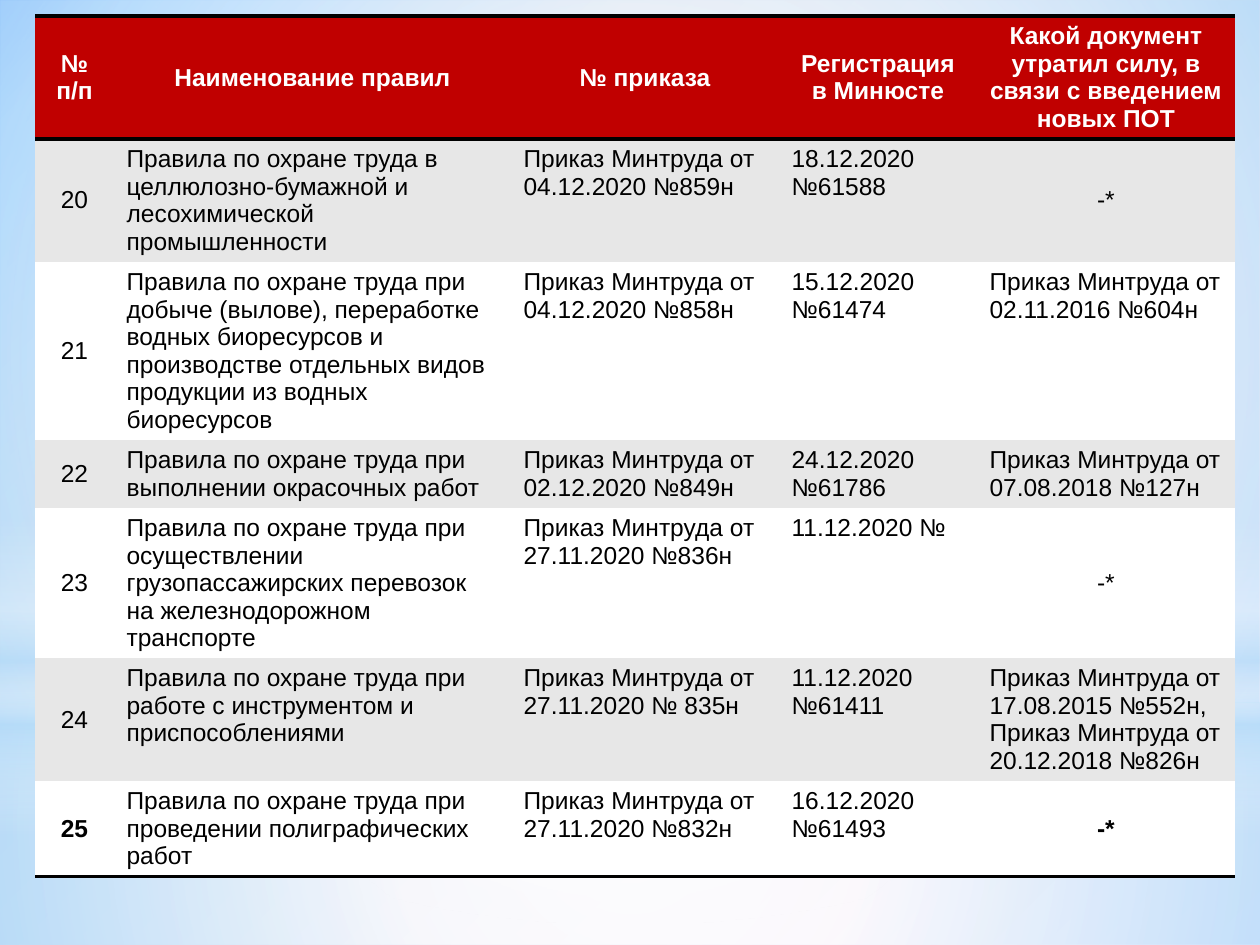
from typing import NamedTuple

from lxml import etree
from pptx import Presentation
from pptx.dml.color import RGBColor
from pptx.enum.shapes import MSO_SHAPE
from pptx.enum.text import MSO_ANCHOR, PP_ALIGN
from pptx.oxml.ns import qn
from pptx.util import Pt

EMU_PER_PX = 914400 / 126
SLIDE_W, SLIDE_H = 1260, 945

RECT, OVAL = MSO_SHAPE.RECTANGLE, MSO_SHAPE.OVAL
CENTER, LEFT = PP_ALIGN.CENTER, PP_ALIGN.LEFT
MIDDLE, TOP = MSO_ANCHOR.MIDDLE, MSO_ANCHOR.TOP

WHITE = RGBColor(0xFF, 0xFF, 0xFF)
BLACK = RGBColor(0x00, 0x00, 0x00)
RED = RGBColor(0xC0, 0x00, 0x00)
GREY = RGBColor(0xE7, 0xE7, 0xE7)
PALE_BLUE = RGBColor(0xB4, 0xDC, 0xFA)
SKY_DEEP = RGBColor(0x5E, 0x9E, 0xFF)
SKY = RGBColor(0x85, 0xC2, 0xFF)
SKY_PALE = RGBColor(0xC4, 0xD6, 0xEB)
PINK = RGBColor(0xFF, 0xEB, 0xFA)

FONT, FONT_SIZE = "Arial", Pt(14)
BORDER_WIDTH = Pt(2)
NO_STYLE_NO_GRID = "{2D5ABB26-0587-4C30-8999-92F81FD0307C}"


class Stop(NamedTuple):
    pos: int
    color: RGBColor
    alpha: int = 100


class Glow(NamedTuple):
    """A gradient shape behind the table; angle None means radial."""
    kind: MSO_SHAPE
    x: int
    y: int
    w: int
    h: int
    stops: list[Stop]
    angle: int | None = None


class Rule(NamedTuple):
    number: str
    title: str
    order: str
    registration: str
    replaced: str


SKY_STOPS = [Stop(0, SKY_DEEP), Stop(6, SKY), Stop(29, SKY_PALE), Stop(100, PINK)]

GLOWS = [
    Glow(RECT, 0, 703, 1260, 242,
         [Stop(0, WHITE, 91), Stop(37, WHITE, 76), Stop(100, PALE_BLUE, 79)]),
    Glow(RECT, 0, 0, 1260, 703,
         [Stop(0, WHITE, 89), Stop(48, WHITE, 62), Stop(100, PALE_BLUE, 79)]),
    Glow(RECT, 0, 519, 1260, 315,
         [Stop(0, WHITE, 0), Stop(29, WHITE, 30), Stop(45, PALE_BLUE, 40),
          Stop(55, WHITE, 26), Stop(65, PALE_BLUE, 60), Stop(100, WHITE, 0)], 90),
    Glow(OVAL, 0, 221, 1260, 703, [Stop(0, WHITE), Stop(56, WHITE, 0)]),
]

TABLE_X, TABLE_Y = 35, 16
COL_WIDTHS = [79, 397, 268, 198, 258]
ROW_HEIGHTS = [123, 123, 178, 68, 150, 123, 95]
NO_DOCUMENT = "-*"

HEADER = Rule("№ п/п", "Наименование правил", "№ приказа", "Регистрация в Минюсте",
              "Какой документ утратил силу, в связи с введением новых ПОТ")
RULES = [
    Rule("20", "Правила по охране труда в целлюлозно-бумажной и лесохимической "
         "промышленности",
         "Приказ Минтруда от 04.12.2020 №859н", "18.12.2020 №61588", NO_DOCUMENT),
    Rule("21", "Правила по охране труда при добыче (вылове), переработке водных "
         "биоресурсов и производстве отдельных видов продукции из водных биоресурсов",
         "Приказ Минтруда от 04.12.2020 №858н", "15.12.2020 №61474",
         "Приказ Минтруда от 02.11.2016 №604н"),
    Rule("22", "Правила по охране труда при выполнении окрасочных работ",
         "Приказ Минтруда от 02.12.2020 №849н", "24.12.2020 №61786",
         "Приказ Минтруда от 07.08.2018 №127н"),
    Rule("23", "Правила по охране труда при осуществлении грузопассажирских перевозок "
         "на железнодорожном транспорте",
         "Приказ Минтруда от 27.11.2020 №836н", "11.12.2020 №", NO_DOCUMENT),
    Rule("24", "Правила по охране труда при работе с инструментом и приспособлениями",
         "Приказ Минтруда от 27.11.2020 № 835н", "11.12.2020 №61411",
         "Приказ Минтруда от 17.08.2015 №552н, Приказ Минтруда от 20.12.2018 №826н"),
    Rule("25", "Правила по охране труда при проведении полиграфических работ",
         "Приказ Минтруда от 27.11.2020 №832н", "16.12.2020 №61493", NO_DOCUMENT),
]


def px(n: int) -> int:
    return round(n * EMU_PER_PX)


def sub(parent, tag: str, **attrs):
    return etree.SubElement(parent, qn(tag), {k: str(v) for k, v in attrs.items()})


def set_gradient(parent, stops: list[Stop], angle: int | None) -> None:
    """Swap the solid fill inside parent for a gradient."""
    grad = etree.Element(qn("a:gradFill"), rotWithShape="1")
    stop_list = sub(grad, "a:gsLst")
    for stop in stops:
        gs = sub(stop_list, "a:gs", pos=stop.pos * 1000)
        color = sub(gs, "a:srgbClr", val=stop.color)
        if stop.alpha < 100:
            sub(color, "a:alpha", val=stop.alpha * 1000)
    if angle is None:
        radial = sub(grad, "a:path", path="circle")
        sub(radial, "a:fillToRect", l=50000, t=50000, r=50000, b=50000)
    else:
        sub(grad, "a:lin", ang=angle * 60000, scaled=0)
    parent.replace(parent.find(qn("a:solidFill")), grad)


def add_glow(slide, glow: Glow) -> None:
    sp = slide.shapes.add_shape(glow.kind, px(glow.x), px(glow.y), px(glow.w), px(glow.h))
    sp.shadow.inherit = False
    sp.line.fill.background()
    sp.fill.solid()
    set_gradient(sp._element.spPr, glow.stops, glow.angle)


def add_border(cell, side: str) -> None:
    ln = sub(cell._tc.get_or_add_tcPr(), side, w=BORDER_WIDTH)
    sub(sub(ln, "a:solidFill"), "a:srgbClr", val=BLACK)


def fill_cell(cell, text: str, fill: RGBColor, color: RGBColor,
              bold: bool, centered: bool) -> None:
    cell.fill.solid()
    cell.fill.fore_color.rgb = fill
    cell.vertical_anchor = MIDDLE if centered else TOP
    p = cell.text_frame.paragraphs[0]
    p.alignment = CENTER if centered else LEFT
    r = p.add_run()
    r.text = text
    r.font.name, r.font.size, r.font.bold = FONT, FONT_SIZE, bold
    r.font.color.rgb = color


def add_rules_table(slide) -> None:
    rows = [HEADER, *RULES]
    last = len(rows) - 1
    table = slide.shapes.add_table(
        len(rows), len(COL_WIDTHS), px(TABLE_X), px(TABLE_Y),
        px(sum(COL_WIDTHS)), px(sum(ROW_HEIGHTS))).table
    table.first_row = table.horz_banding = False
    table._tbl.tblPr.find(qn("a:tableStyleId")).text = NO_STYLE_NO_GRID
    for column, width in zip(table.columns, COL_WIDTHS):
        column.width = px(width)
    for i, (row, height, rule) in enumerate(zip(table.rows, ROW_HEIGHTS, rows)):
        row.height = px(height)
        is_header = i == 0
        fill = RED if is_header else GREY if i % 2 else WHITE
        for j, (cell, text) in enumerate(zip(row.cells, rule)):
            centered = is_header or j == 0 or text == NO_DOCUMENT
            if is_header:
                add_border(cell, "a:lnT")
            if i in (0, last):
                add_border(cell, "a:lnB")
            fill_cell(cell, text, fill, WHITE if is_header else BLACK,
                      is_header or (i == last and centered), centered)


def main() -> None:
    prs = Presentation()
    prs.slide_width, prs.slide_height = px(SLIDE_W), px(SLIDE_H)
    slide = prs.slides.add_slide(prs.slide_layouts[6])
    slide.background.fill.solid()
    set_gradient(slide._element.find(".//" + qn("p:bgPr")), SKY_STOPS, 45)
    for glow in GLOWS:
        add_glow(slide, glow)
    add_rules_table(slide)
    prs.save("out.pptx")


if __name__ == "__main__":
    main()
